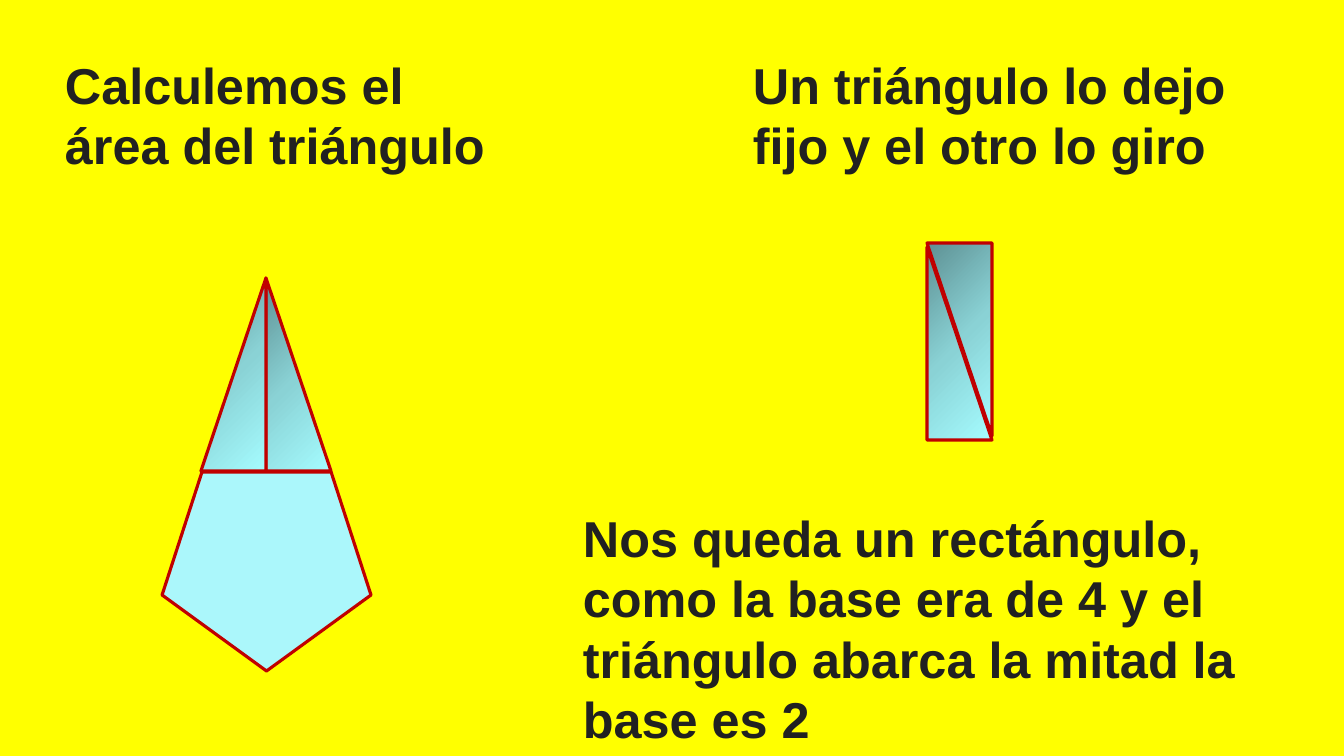
from dataclasses import dataclass

from lxml import etree
from pptx import Presentation
from pptx.dml.color import RGBColor
from pptx.enum.shapes import MSO_SHAPE
from pptx.enum.text import MSO_AUTO_SIZE
from pptx.oxml import parse_xml
from pptx.oxml.ns import nsdecls, qn
from pptx.util import Emu, Pt

RIGHT_TRIANGLE = MSO_SHAPE.RIGHT_TRIANGLE
PENTAGON = MSO_SHAPE.REGULAR_PENTAGON
GROW = MSO_AUTO_SIZE.SHAPE_TO_FIT_TEXT

EMU_PER_PX = 914400 / 100.8
COLORS = {
    "background": "FFFF00",
    "text": "212121",
    "outline": "C00000",
    "pentagon": "ABF7FB",
    "shade_dark": "5E9194",
    "shade_mid": "8AD2D5",
    "shade_light": "A5FCFF",
}
TRIANGLE_WIDTH, TRIANGLE_HEIGHT = 65, 193


@dataclass
class Caption:
    text: str
    left: int
    top: int
    width: int
    height: int = 194


@dataclass
class Triangle:
    left: int
    top: int
    rotation: int = 0
    mirrored: bool = False


CAPTIONS = [
    Caption("Calculemos el área del triángulo", 55, 49, 467),
    Caption("Un triángulo lo dejo fijo y el otro lo giro", 743, 49, 523),
    Caption("Nos queda un rectángulo, como la base era de 4 y el "
            "triángulo abarca la mitad la base es 2", 573, 502, 736),
]
TRIANGLES = [
    # Halves joined into a rectangle
    Triangle(927, 247),
    Triangle(927, 243, rotation=180),
    # Halves of the star point
    Triangle(266, 278),
    Triangle(201, 278, mirrored=True),
]


def px(length: int) -> Emu:
    return Emu(round(length * EMU_PER_PX))


def rgb(name: str) -> RGBColor:
    return RGBColor.from_string(COLORS[name])


def add_outlined(slide, kind, left: int, top: int, width: int, height: int):
    shape = slide.shapes.add_shape(kind, px(left), px(top), px(width), px(height))
    shape.shadow.inherit = False
    shape.line.color.rgb = rgb("outline")
    shape.line.width = Pt(2.25)
    return shape


def add_caption(slide, caption: Caption) -> None:
    box = slide.shapes.add_textbox(
        px(caption.left), px(caption.top), px(caption.width), px(caption.height))
    frame = box.text_frame
    frame.word_wrap = True
    frame.auto_size = GROW
    paragraph = frame.paragraphs[0]
    paragraph.line_spacing = Pt(43.2)
    run = paragraph.add_run()
    run.text = caption.text
    run.font.name = "Arial"
    run.font.size = Pt(36)
    run.font.bold = True
    run.font.color.rgb = rgb("text")


def add_pentagon(slide) -> None:
    pentagon = add_outlined(slide, PENTAGON, 162, 472, 209, 199)
    pentagon.rotation = 180
    pentagon.fill.solid()
    pentagon.fill.fore_color.rgb = rgb("pentagon")


def shade_from_corner(shape) -> None:
    """Radial gradient that starts dark in the top left corner."""
    gradient = parse_xml(
        f'<a:gradFill {nsdecls("a")} rotWithShape="1"><a:gsLst/>'
        '<a:path path="circle"><a:fillToRect r="100000" b="100000"/></a:path>'
        '<a:tileRect l="-100000" t="-100000"/></a:gradFill>')
    for index, name in enumerate(("shade_dark", "shade_mid", "shade_light")):
        stop = etree.SubElement(gradient[0], qn("a:gs"), pos=str(index * 50000))
        etree.SubElement(stop, qn("a:srgbClr"), val=COLORS[name])
    shape.element.spPr.find(qn("a:prstGeom")).addnext(gradient)


def add_triangle(slide, triangle: Triangle) -> None:
    shape = add_outlined(slide, RIGHT_TRIANGLE, triangle.left, triangle.top,
                         TRIANGLE_WIDTH, TRIANGLE_HEIGHT)
    shape.rotation = triangle.rotation
    if triangle.mirrored:
        shape.element.spPr.find(qn("a:xfrm")).set("flipH", "1")
    shade_from_corner(shape)


def main() -> None:
    presentation = Presentation()
    presentation.slide_width = px(1344)
    presentation.slide_height = px(756)
    slide = presentation.slides.add_slide(presentation.slide_layouts[6])
    slide.background.fill.solid()
    slide.background.fill.fore_color.rgb = rgb("background")

    # Figures
    add_pentagon(slide)
    for triangle in TRIANGLES:
        add_triangle(slide, triangle)

    # Explanations
    for caption in CAPTIONS:
        add_caption(slide, caption)

    presentation.save("out.pptx")


if __name__ == "__main__":
    main()
